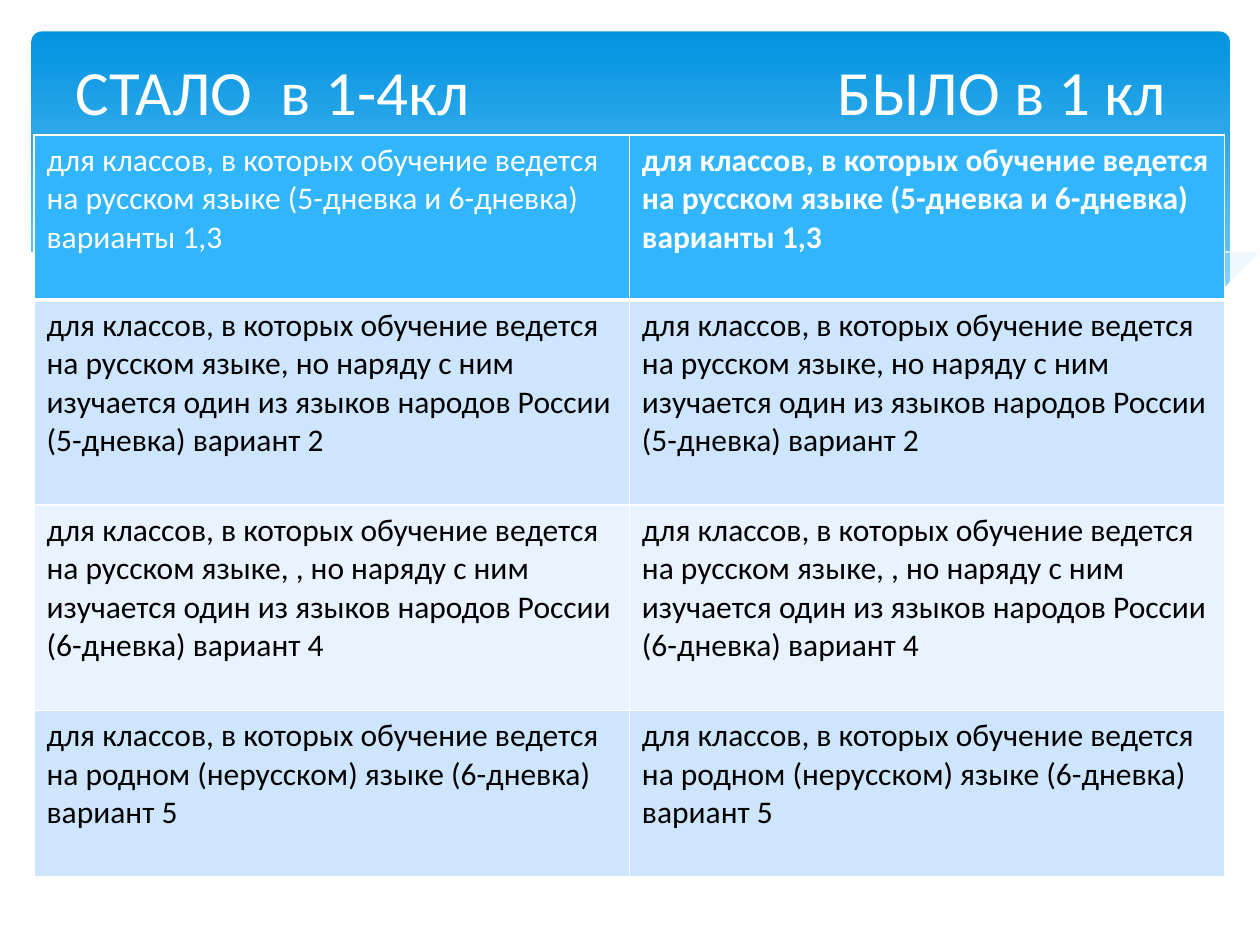
import pptx
import pptx.util
import pptx.dml.color
import pptx.enum.shapes
import pptx.enum.text
import pptx.oxml
import pptx.oxml.ns

Inches, Pt = pptx.util.Inches, pptx.util.Pt
RGBColor = pptx.dml.color.RGBColor
qn = pptx.oxml.ns.qn

WIDTH, HEIGHT = 10, 7.5
FONT = "Calibri"
WHITE = RGBColor(0xFF, 0xFF, 0xFF)
BLACK = RGBColor(0, 0, 0)
DEEP_BLUE = RGBColor(0x02, 0x93, 0xE0)
SKY_BLUE = RGBColor(0x83, 0xD3, 0xFE)
WAVE_BLUE = RGBColor(0xC6, 0xE7, 0xFC)
HEADER_BLUE = RGBColor(0x31, 0xB6, 0xFD)
BAND_DARK = RGBColor(0xCE, 0xE5, 0xFE)
BAND_LIGHT = RGBColor(0xE8, 0xF3, 0xFF)

TITLE = "СТАЛО  в 1-4кл\tБЫЛО в 1 кл"
START = "для классов, в которых обучение ведется на "
PEOPLES = "но наряду с ним изучается один из языков народов России "
ROWS = [
    (START + "русском языке (5-дневка и 6-дневка) варианты 1,3", HEADER_BLUE, 1.31),
    (START + "русском языке, " + PEOPLES + "(5-дневка) вариант 2", BAND_DARK, 1.63),
    (START + "русском языке, , " + PEOPLES + "(6-дневка) вариант 4", BAND_LIGHT, 1.63),
    (START + "родном (нерусском) языке (6-дневка) вариант 5", BAND_DARK, 1.32),
]

RIGHT_WAVE = [(9.76, 2), (9.35, 2.07), (8.61, 2.23), (7.79, 2.42), (6.61, 2.65),
              (7.19, 2.72), (7.81, 2.77), (8.35, 2.77), (8.81, 2.73), (9.28, 2.63),
              (9.76, 2.47)]
LONG_WAVE = [(8.93, 2.73), (8.07, 2.6), (7.06, 2.4), (6.29, 2.22), (5.41, 2.03),
             (4.65, 1.91), (3.8, 1.85), (2.86, 1.91), (3.62, 2.03), (4.49, 2.22),
             (5.66, 2.48), (6.65, 2.66), (7.48, 2.76), (8.18, 2.78)]
FALLING_LINE = [(3.09, 1.95), (3.63, 1.89), (4.33, 1.87), (5.1, 1.92), (6.08, 2.04),
                (6.95, 2.19), (7.95, 2.41), (9.07, 2.72)]
RISING_LINE = [(6.13, 2.57), (6.95, 2.35), (7.76, 2.16), (8.66, 1.99), (9.24, 1.9),
               (9.75, 1.85)]
WHITE_WAVE = [(9.77, 2.46), (9.4, 2.59), (8.99, 2.69), (8.5, 2.75), (7.93, 2.76),
              (7.26, 2.72), (6.48, 2.62), (5.55, 2.45), (4.47, 2.2), (3.4, 1.97),
              (2.71, 1.88), (1.93, 1.84), (1.32, 1.86), (0.85, 1.93), (0.46, 2.03),
              (0.23, 2.13), (0.23, 3.29), (9.77, 3.29)]


def add_banner(slide):
    """Add the rounded gradient panel behind the title."""
    banner = slide.shapes.add_shape(
        pptx.enum.shapes.MSO_SHAPE.ROUNDED_RECTANGLE,
        Inches(0.25), Inches(0.25), Inches(9.51), Inches(2.7))
    banner.adjustments[0] = 0.03
    banner.shadow.inherit = False
    banner.line.fill.background()
    banner.fill.gradient()
    banner.fill.gradient_angle = 270
    stops = banner.fill.gradient_stops
    for stop, color, position in zip(stops, (DEEP_BLUE, SKY_BLUE), (0, 0.9)):
        stop.color.rgb = color
        stop.position = position


def add_curve(slide, points, close):
    """Add an outline through points given in inches."""
    builder = slide.shapes.build_freeform(*points[0], scale=Inches(1))
    builder.add_line_segments(points[1:], close=close)
    curve = builder.convert_to_shape()
    curve.shadow.inherit = False
    return curve


def add_wave(slide, points, color, opacity=100):
    """Add a filled wave with the given opacity in percent."""
    wave = add_curve(slide, points, True)
    wave.line.fill.background()
    wave.fill.solid()
    wave.fill.fore_color.rgb = color
    if opacity < 100:
        color_element = wave.element.spPr.find(qn("a:solidFill"))[0]
        alpha = pptx.oxml.parse_xml(
            f'<a:alpha {pptx.oxml.ns.nsdecls("a")} val="{opacity * 1000}"/>')
        color_element.append(alpha)


def add_wave_line(slide, points):
    """Add a white hairline along a wave."""
    line = add_curve(slide, points, False)
    line.fill.background()
    line.line.color.rgb = WHITE
    line.line.width = Pt(0)


def format_runs(paragraph, size, color, bold=False):
    """Set the font of every run in a paragraph."""
    for run in paragraph.runs:
        run.font.name = FONT
        run.font.size = Pt(size)
        run.font.bold = bold
        run.font.color.rgb = color


def set_borders(cell, top, bottom):
    """Draw white cell borders with widths in points."""
    properties = cell._tc.get_or_add_tcPr()
    for side, width in (("L", 1), ("R", 1), ("T", top), ("B", bottom)):
        properties.append(pptx.oxml.parse_xml(
            f'<a:ln{side} {pptx.oxml.ns.nsdecls("a")} w="{Pt(width)}">'
            f'<a:solidFill><a:srgbClr val="{WHITE}"/></a:solidFill></a:ln{side}>'))


def add_comparison_table(slide):
    """Add the table that compares the plans in two columns."""
    frame = slide.shapes.add_table(
        len(ROWS), 2, Inches(0.27), Inches(1.07), Inches(9.45),
        Inches(sum(height for _, _, height in ROWS)))
    table = frame.table
    for index, (text, fill, height) in enumerate(ROWS):
        table.rows[index].height = Inches(height)
        header = index == 0
        for column, cell in enumerate(table.rows[index].cells):
            cell.text_frame.text = text
            format_runs(cell.text_frame.paragraphs[0], 18,
                        WHITE if header else BLACK, header and column == 1)
            set_borders(cell, 3 if index == 1 else 1, 3 if header else 1)
            cell.fill.solid()
            cell.fill.fore_color.rgb = fill


def place_title(slide):
    """Fill the title and bring it in front of the other shapes."""
    title = slide.shapes.title
    title.left, title.top = Inches(0.05 * WIDTH), Inches(0.37)
    title.width, title.height = Inches(0.9 * WIDTH), Inches(0.7)
    frame = title.text_frame
    frame.text = TITLE
    frame.word_wrap = True
    frame.auto_size = pptx.enum.text.MSO_AUTO_SIZE.NONE
    frame.vertical_anchor = pptx.enum.text.MSO_ANCHOR.MIDDLE
    paragraph = frame.paragraphs[0]
    paragraph.alignment = pptx.enum.text.PP_ALIGN.LEFT
    format_runs(paragraph, 36, WHITE)
    paragraph._p.get_or_add_pPr().append(pptx.oxml.parse_xml(
        f'<a:tabLst {pptx.oxml.ns.nsdecls("a")}>'
        f'<a:tab pos="{Inches(6.05)}" algn="l"/></a:tabLst>'))
    title.element.getparent().append(title.element)


def main():
    """Build and save the slide."""
    presentation = pptx.Presentation()
    presentation.slide_width = Inches(WIDTH)
    presentation.slide_height = Inches(HEIGHT)
    slide = presentation.slides.add_slide(presentation.slide_layouts[5])
    add_banner(slide)
    add_wave(slide, RIGHT_WAVE, WAVE_BLUE, 29)
    add_wave(slide, LONG_WAVE, WAVE_BLUE, 40)
    add_wave_line(slide, FALLING_LINE)
    add_wave_line(slide, RISING_LINE)
    add_wave(slide, WHITE_WAVE, WHITE)
    add_comparison_table(slide)
    place_title(slide)
    presentation.save("out.pptx")


if __name__ == "__main__":
    main()
